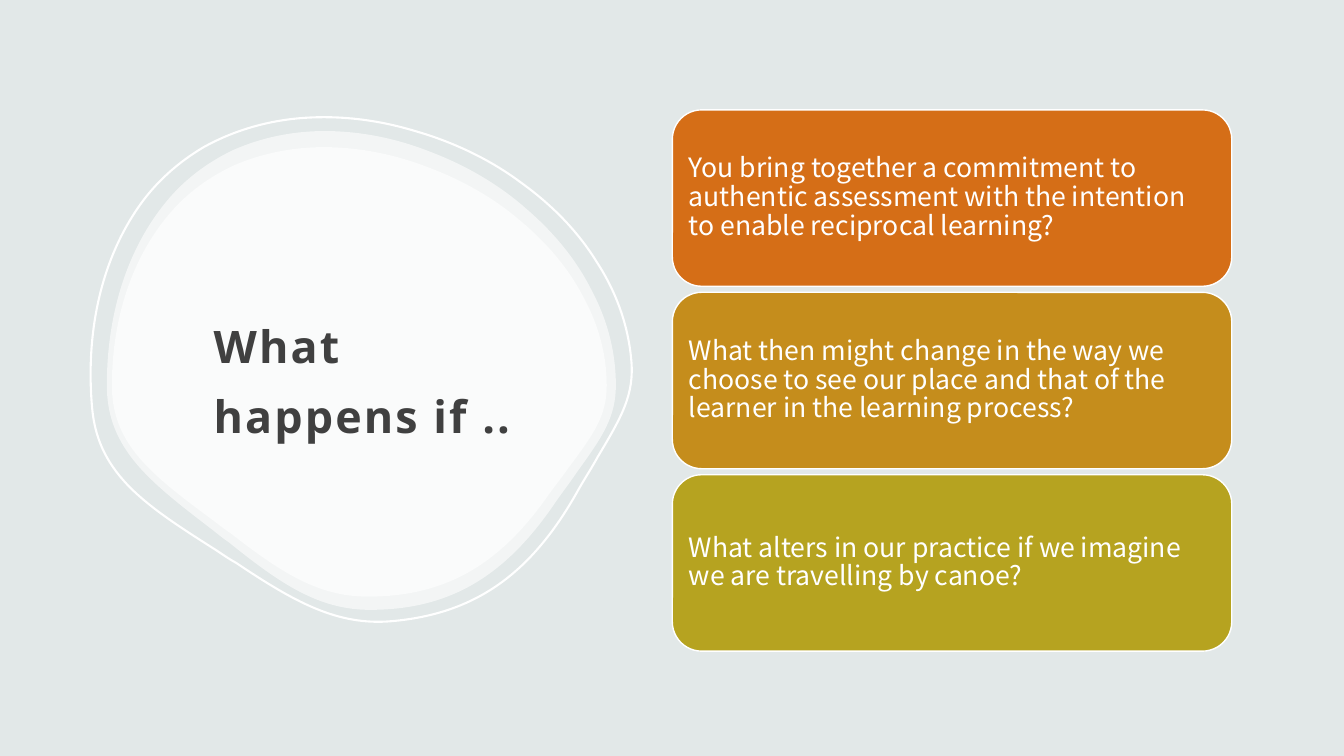
from lxml.etree import SubElement
from pptx import Presentation
from pptx.dml.color import RGBColor
from pptx.enum.shapes import MSO_SHAPE as Shape
from pptx.enum.text import MSO_ANCHOR as Anchor, PP_ALIGN as Align
from pptx.oxml.ns import qn
from pptx.util import Inches, Pt

# Content
TITLE = "What happens if .."
CARDS = [
    ("You bring together a commitment to authentic assessment with the "
     "intention to enable reciprocal learning?", RGBColor(0xD5, 0x6E, 0x17)),
    ("What then might change in the way we choose to see our place and that "
     "of the learner in the learning process?", RGBColor(0xC5, 0x8D, 0x1C)),
    ("What alters in our practice if we imagine we are travelling by canoe?",
     RGBColor(0xB6, 0xA3, 0x20)),
]

# Blob outline: start point, then Bezier curves (two controls and an end)
BLOB_BOX = (1.06, 1.3, 5.05, 4.75)
START = (3.22, 1.3)
CURVES = [
    ((2.89, 1.3), (2.58, 1.37), (2.31, 1.49)),
    ((2.06, 1.61), (1.83, 1.78), (1.65, 2)),
    ((1.27, 2.46), (1.06, 3.1), (1.06, 3.82)),
    ((1.06, 4.1), (1.14, 4.33), (1.32, 4.56)),
    ((1.51, 4.8), (1.8, 5.02), (2.1, 5.25)),
    ((2.15, 5.29), (2.21, 5.34), (2.27, 5.38)),
    ((2.78, 5.79), (3.16, 6.05), (3.67, 6.05)),
    ((4.45, 6.05), (5.01, 5.73), (5.52, 4.97)),
    ((5.59, 4.87), (5.66, 4.78), (5.72, 4.69)),
    ((5.98, 4.33), (6.11, 4.14), (6.11, 3.82)),
    ((6.11, 3.5), (6.03, 3.18), (5.87, 2.88)),
    ((5.72, 2.58), (5.5, 2.31), (5.22, 2.07)),
    ((4.95, 1.83), (4.62, 1.64), (4.28, 1.51)),
    ((3.93, 1.37), (3.57, 1.3), (3.22, 1.3)),
]
INNER_BOX = (1.11, 1.46, 4.91, 4.46)
RING_BOX = (0.89, 1.13, 5.37, 5.05)

BACK = RGBColor(0xE2, 0xE8, 0xE8)
WHITE = RGBColor(0xFF, 0xFF, 0xFF)
DARK = RGBColor(0x40, 0x40, 0x40)

CARD_X, CARD_Y, CARD_W, CARD_H, CARD_STEP = 6.67, 1.09, 5.55, 1.75, 1.81


def add_blob(slide, box):
    """The outline, fitted to a box."""
    x, y, w, h = box
    left, top, wide, high = BLOB_BOX

    def fit(dot):
        return (Inches((dot[0] - left) / wide * w),
                Inches((dot[1] - top) / high * h))

    pen = slide.shapes.build_freeform(*fit(START))
    pen.add_line_segments([fit(curve[-1]) for curve in CURVES], close=True)
    blob = pen.convert_to_shape(Inches(x), Inches(y))
    blob.shadow.inherit = False

    # Bend each straight segment into its curve
    lines = list(blob._element.iter(qn("a:lnTo")))
    for line, curve in zip(lines, CURVES):
        line.tag = qn("a:cubicBezTo")
        line.clear()
        for dot in curve:
            across, down = fit(dot)
            SubElement(line, qn("a:pt"), x=str(across), y=str(down))
    for line in lines[len(CURVES):]:
        line.getparent().remove(line)
    return blob


def set_text(frame, text, font, size, color, space, pads):
    frame.word_wrap = True
    frame.vertical_anchor = Anchor.MIDDLE
    (frame.margin_left, frame.margin_top,
     frame.margin_right, frame.margin_bottom) = map(Inches, pads)
    para = frame.paragraphs[0]
    para.alignment = Align.LEFT
    para.line_spacing = space
    run = para.add_run()
    run.text = text
    run.font.name = font
    run.font.size = Pt(size)
    run.font.color.rgb = color
    return run


def main():
    deck = Presentation()
    deck.slide_width, deck.slide_height = Inches(40 / 3), Inches(7.5)
    slide = deck.slides.add_slide(deck.slide_layouts[5])
    slide.background.fill.solid()
    slide.background.fill.fore_color.rgb = BACK

    # Two translucent blobs
    for box in (BLOB_BOX, INNER_BOX):
        blob = add_blob(slide, box)
        blob.fill.solid()
        blob.fill.fore_color.rgb = WHITE
        tint = blob._element.spPr.find(".//" + qn("a:srgbClr"))
        SubElement(tint, qn("a:alpha"), val="60000")
        blob.line.fill.background()

    # Tilted ring
    ring = add_blob(slide, RING_BOX)
    ring.rotation = -5
    ring.fill.background()
    ring.line.color.rgb = WHITE
    ring.line.width = Pt(1.5)

    # Title, in front of the blobs
    title = slide.shapes.title
    title.left, title.top, title.width, title.height = map(
        Inches, (2, 2.08, 3.62, 3.21))
    run = set_text(title.text_frame, TITLE, "Open Sans", 32, DARK, 1.3,
                   (0.12, 0.12, 0.12, 0.1))
    run.font.bold = True
    run.font._element.set("spc", "150")
    slide.shapes._spTree.append(title._element)

    # Question cards
    for row, (text, color) in enumerate(CARDS):
        card = slide.shapes.add_shape(
            Shape.ROUNDED_RECTANGLE, Inches(CARD_X),
            Inches(CARD_Y + row * CARD_STEP), Inches(CARD_W), Inches(CARD_H))
        card.shadow.inherit = False
        card.fill.solid()
        card.fill.fore_color.rgb = color
        card.line.color.rgb = WHITE
        card.line.width = Pt(1)
        set_text(card.text_frame, text, "Noto Sans CJK JP", 19, WHITE, 0.9,
                 (0.08,) * 4)

    deck.save("out.pptx")


if __name__ == "__main__":
    main()
